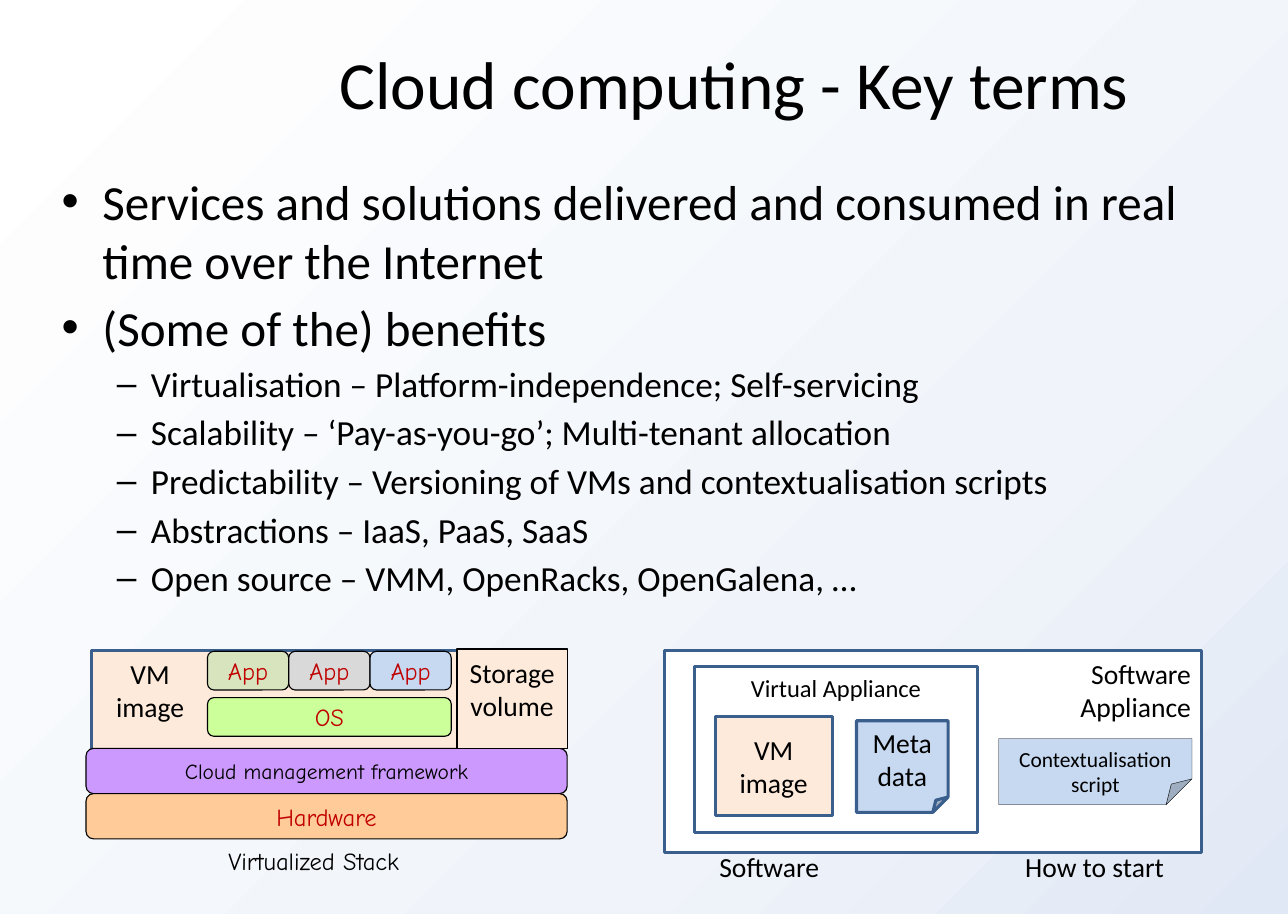
from copy import deepcopy
from dataclasses import dataclass
from typing import Any, Optional

from lxml.etree import SubElement
from pptx import Presentation
from pptx.dml.color import RGBColor
from pptx.enum.shapes import MSO_SHAPE as Preset
from pptx.enum.text import MSO_ANCHOR as Anchor, PP_ALIGN as Align
from pptx.oxml.ns import qn
from pptx.util import Emu, Inches, Pt

COLORS = {
    "black": "000000", "white": "FFFFFF", "red": "C00000", "border": "3A5F8C",
    "peach": "FDEADA", "blue": "C6D9F1", "orange": "FFCC99", "lime": "CCFF99",
    "olive": "D7E4BD", "grey": "D9D9D9", "purple": "CC99FF",
    "sky": "F0F4FA", "haze": "E1E8F5",
}
PLAIN, HAND = "Calibri", "Comic Neue"
WIDTH, HEIGHT = Inches(11.67), Inches(8.28)


@dataclass(frozen=True)
class Cell:
    """Left, top, width and height in percent of the slide."""
    left: float
    top: float
    width: float
    height: float

    def emu(self) -> tuple[Emu, Emu, Emu, Emu]:
        sizes = (WIDTH, HEIGHT, WIDTH, HEIGHT)
        shares = (self.left, self.top, self.width, self.height)
        return tuple(Emu(round(size * share / 100)) for size, share in zip(sizes, shares))


@dataclass(frozen=True)
class Block:
    cell: Cell
    text: str = ""
    size: float = 18
    font: str = PLAIN
    ink: str = "black"
    preset: Optional[Preset] = None
    fill: Optional[str] = None
    line: str = "border"
    weight: float = 2
    fold: Optional[float] = None
    align: Align = Align.CENTER
    anchor: Anchor = Anchor.TOP
    top_inset: float = 0.06


@dataclass(frozen=True)
class Bullet:
    mark: str
    size: float
    margin: float
    hang: float
    gap: float


TOPIC = Bullet("•", 32, 0.37, 0.37, 5.3)
DETAIL = Bullet("–", 23, 0.81, 0.31, 4.1)
BODY = Cell(3.94, 18, 94.43, 49.4)
POINTS = [
    (TOPIC, "Services and solutions delivered and consumed in real time over the Internet"),
    (TOPIC, "(Some of the) benefits"),
    (DETAIL, "Virtualisation – Platform-independence; Self-servicing"),
    (DETAIL, "Scalability – ‘Pay-as-you-go’; Multi-tenant allocation"),
    (DETAIL, "Predictability – Versioning of VMs and contextualisation scripts"),
    (DETAIL, "Abstractions – IaaS, PaaS, SaaS"),
    (DETAIL, "Open source – VMM, OpenRacks, OpenGalena, …"),
]


def stack_block(cell: Cell, text: str, fill: str, size: float = 16, ink: str = "red") -> Block:
    return Block(cell, text, size, HAND, ink, Preset.ROUNDED_RECTANGLE, fill,
                 "black", 0.75, anchor=Anchor.MIDDLE)


APP_LEFT, APP_WIDTH = 16.11, 6.31
LAYER_TOP, LAYER_HEIGHT = 81.88, 4.95
LAYERS = [("Cloud management framework", "purple", 14, "black"),
          ("Hardware", "orange", 16, "red")]

TITLE = Block(Cell(16.88, 2.78, 80.29, 12.44), "Cloud computing - Key terms", 44,
              anchor=Anchor.MIDDLE)
VIRTUAL_STACK = [
    Block(Cell(7.11, 71.14, 28.71, 10.87), preset=Preset.RECTANGLE, fill="peach"),
    stack_block(Cell(APP_LEFT, 76.33, 3 * APP_WIDTH, 4.23), "OS", "lime"),
    *(stack_block(Cell(APP_LEFT + column * APP_WIDTH, 71.26, APP_WIDTH, 4.23), "App", fill)
      for column, fill in enumerate(("olive", "grey", "blue"))),
    *(stack_block(Cell(6.68, LAYER_TOP + row * LAYER_HEIGHT, 37.36, LAYER_HEIGHT), *layer)
      for row, layer in enumerate(LAYERS)),
    Block(Cell(16.88, 91.79, 18.08, 4.47), "Virtualized Stack", 16, HAND, align=Align.LEFT),
    Block(Cell(7.97, 71.14, 7.37, 8.7), "VM\nimage"),
    Block(Cell(35.48, 71.01, 8.57, 10.87), "Storage\nvolume", preset=Preset.RECTANGLE,
          fill="peach", line="black", weight=0.75),
]
SOFTWARE_APPLIANCE = [
    Block(Cell(51.59, 71.14, 41.73, 22.1), "Software\nAppliance", preset=Preset.RECTANGLE,
          fill="white", align=Align.RIGHT),
    Block(Cell(77.55, 80.8, 15, 7.25), "Contextualisation script", 14,
          preset=Preset.FOLDED_CORNER, fill="blue", line="black", weight=0.25, fold=0.39,
          anchor=Anchor.MIDDLE, top_inset=0.29),
    Block(Cell(53.9, 72.95, 22.02, 18.12), "Virtual Appliance", 16, preset=Preset.RECTANGLE),
    Block(Cell(66.5, 78.86, 7.11, 10.02), "Meta\ndata", preset=Preset.FOLDED_CORNER,
          fill="blue", anchor=Anchor.MIDDLE),
    Block(Cell(55.53, 78.38, 9.08, 10.87), "VM\nimage", preset=Preset.RECTANGLE,
          fill="peach", anchor=Anchor.MIDDLE),
    Block(Cell(55.01, 92.27, 9.6, 4.83), "Software", align=Align.LEFT),
    Block(Cell(78.75, 92.27, 12.68, 4.83), "How to start", align=Align.LEFT),
]


def color(name: str) -> RGBColor:
    return RGBColor.from_string(COLORS[name])


def set_font(para: Any, font: str, size: float, ink: str) -> None:
    para.font.name = font
    para.font.size = Pt(size)
    para.font.color.rgb = color(ink)


def set_frame(frame: Any, anchor: Anchor, top_inset: float) -> None:
    frame.word_wrap = True
    frame.vertical_anchor = anchor
    frame.margin_left = frame.margin_right = Inches(0.1)
    frame.margin_top, frame.margin_bottom = Inches(top_inset), Inches(0.06)


def set_fold(box: Any, share: float) -> None:
    geometry = box._element.spPr.find(qn("a:prstGeom"))
    guides = geometry.find(qn("a:avLst"))
    if guides is None:
        guides = SubElement(geometry, qn("a:avLst"))
    SubElement(guides, qn("a:gd"), name="adj", fmla=f"val {round(share * 100000)}")


def draw_block(page: Any, block: Block) -> None:
    if block.preset is None:
        box = page.shapes.add_textbox(*block.cell.emu())
    else:
        box = page.shapes.add_shape(block.preset, *block.cell.emu())
        box.shadow.inherit = False
        if block.fill:
            box.fill.solid()
            box.fill.fore_color.rgb = color(block.fill)
        else:
            box.fill.background()
        box.line.color.rgb = color(block.line)
        box.line.width = Pt(block.weight)
        if block.fold:
            set_fold(box, block.fold)
    if block.text:
        set_frame(box.text_frame, block.anchor, block.top_inset)
        para = box.text_frame.paragraphs[0]
        para.text = block.text
        para.alignment = block.align
        set_font(para, block.font, block.size, block.ink)


def draw_points(page: Any) -> None:
    frame = page.shapes.add_textbox(*BODY.emu()).text_frame
    set_frame(frame, Anchor.TOP, 0.06)
    for index, (bullet, text) in enumerate(POINTS):
        para = frame.add_paragraph() if index else frame.paragraphs[0]
        para.text = text
        para.level = int(bullet is DETAIL)
        properties = para._p.get_or_add_pPr()
        properties.set("marL", str(Inches(bullet.margin)))
        properties.set("indent", str(-Inches(bullet.hang)))
        SubElement(properties, qn("a:buFont"), typeface="Arial")
        SubElement(properties, qn("a:buChar"), char=bullet.mark)
        para.space_before = Pt(bullet.gap)
        set_font(para, PLAIN, bullet.size, "black")


def paint_background(page: Any) -> None:
    fill = page.background.fill
    fill.gradient()
    fill.gradient_angle = 315
    first = fill.gradient_stops[0]._gs
    first.addnext(deepcopy(first))
    stops = ((0.03, "white"), (0.68, "sky"), (1, "haze"))
    for stop, (position, name) in zip(fill.gradient_stops, stops):
        stop.position = position
        stop.color.rgb = color(name)


def main() -> None:
    deck = Presentation()
    deck.slide_width, deck.slide_height = WIDTH, HEIGHT
    page = deck.slides.add_slide(deck.slide_layouts[6])
    paint_background(page)
    draw_block(page, TITLE)
    draw_points(page)
    for block in VIRTUAL_STACK + SOFTWARE_APPLIANCE:
        draw_block(page, block)
    deck.save("out.pptx")


if __name__ == "__main__":
    main()
